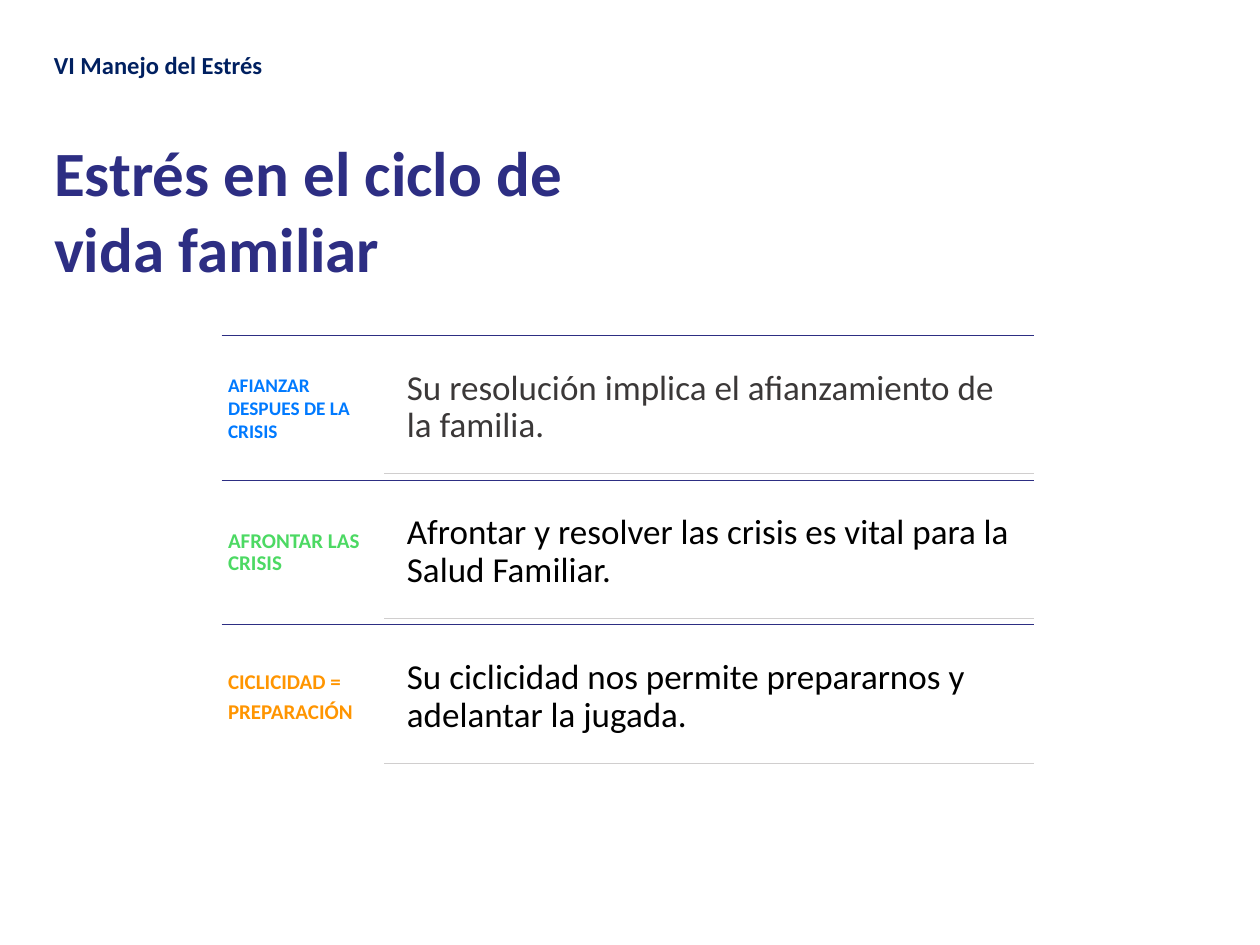
import pptx
import pptx.dml.color
import pptx.enum.shapes
import pptx.enum.text
import pptx.oxml
import pptx.util
from pptx.util import Inches

FONT = "Calibri"
NAVY = "2D2E83"
GRAY = "D0CECE"
LEFT, RIGHT = 1.76, 8.21
RULE_LEFT, TEXT_LEFT = 3.05, 3.15
TABLE_TOP, ROW_HEIGHT = 2.66, 1.15
TEXT_INSET, TEXT_HEIGHT = 0.05, 1.05

# Label lines, label size, label colour, label line spacing, statement, statement colour
ROWS = [
    (["AFIANZAR DESPUES DE LA CRISIS"], 11, "007AFF", 1.0,
     "Su resolución implica el afianzamiento de la familia.", "3B3838"),
    (["AFRONTAR LAS CRISIS"], 12, "4CD963", 0.9,
     "Afrontar y resolver las crisis es vital para la Salud Familiar.", "000000"),
    (["CICLICIDAD =", "PREPARACIÓN"], 12, "FF9500", 0.9,
     "Su ciclicidad nos permite prepararnos y adelantar la jugada.", "000000"),
]


def color(value):
    return pptx.dml.color.RGBColor.from_string(value)


def place(shape, left, top, width, height):
    shape.left, shape.top = Inches(left), Inches(top)
    shape.width, shape.height = Inches(width), Inches(height)


def write(shape, lines, size, fill, bold=False, spacing=1.0, after=0,
          anchor=pptx.enum.text.MSO_ANCHOR.TOP, margin=None):
    """Fill a shape with one paragraph per line; margin None keeps the default insets."""
    frame = shape.text_frame
    frame.word_wrap = True
    frame.auto_size = pptx.enum.text.MSO_AUTO_SIZE.NONE
    frame.vertical_anchor = anchor
    if margin is not None:
        frame.margin_left = frame.margin_right = Inches(margin)
        frame.margin_top = frame.margin_bottom = Inches(margin)
    for index, line in enumerate(lines):
        paragraph = frame.paragraphs[0] if index == 0 else frame.add_paragraph()
        paragraph.alignment = pptx.enum.text.PP_ALIGN.LEFT
        paragraph.line_spacing = spacing
        paragraph.space_after = pptx.util.Pt(after)
        run = paragraph.add_run()
        run.text = line
        run.font.name = FONT
        run.font.size = pptx.util.Pt(size)
        run.font.bold = bold
        run.font.color.rgb = color(fill)


def add_text(slide, box, lines, size, fill, **options):
    shape = slide.shapes.add_textbox(*map(Inches, box))
    write(shape, lines, size, fill, **options)


def add_rule(slide, left, top, fill):
    rule = slide.shapes.add_connector(
        pptx.enum.shapes.MSO_CONNECTOR.STRAIGHT,
        Inches(left), Inches(top), Inches(RIGHT), Inches(top))
    rule.line.color.rgb = color(fill)
    rule.line.width = pptx.util.Pt(0.5)
    properties = rule._element.spPr
    properties.append(pptx.oxml.parse_xml(
        '<a:effectLst xmlns:a="http://schemas.openxmlformats.org/drawingml/2006/main"/>'))


def add_row(slide, top, label, label_size, label_color, label_spacing,
            statement, statement_color):
    middle = pptx.enum.text.MSO_ANCHOR.MIDDLE
    text_top = top + TEXT_INSET
    add_rule(slide, LEFT, top, NAVY)
    add_text(slide, (LEFT, top, RULE_LEFT - LEFT, ROW_HEIGHT), label,
             label_size, label_color, bold=True, spacing=label_spacing,
             after=4, anchor=middle, margin=0.05)
    add_text(slide, (TEXT_LEFT, text_top, RIGHT - TEXT_LEFT, TEXT_HEIGHT),
             [statement], 20, statement_color, spacing=0.9, after=7,
             anchor=middle, margin=0.08)
    add_rule(slide, RULE_LEFT, text_top + TEXT_HEIGHT, GRAY)


def main():
    presentation = pptx.Presentation()
    presentation.slide_width, presentation.slide_height = Inches(10), Inches(7.5)
    slide = presentation.slides.add_slide(presentation.slide_layouts[5])

    title = slide.shapes.title
    place(title, 0.33, 1.01, 4.45, 1.31)
    write(title, ["Estrés en el ciclo de vida familiar"], 36, NAVY,
          bold=True, after=4.5)
    add_text(slide, (0.33, 0.35, 4.94, 0.34), ["VI Manejo del Estrés"], 14,
             "002060", bold=True)

    for index, row in enumerate(ROWS):
        add_row(slide, TABLE_TOP + index * ROW_HEIGHT, *row)

    presentation.save("out.pptx")


if __name__ == "__main__":
    main()
